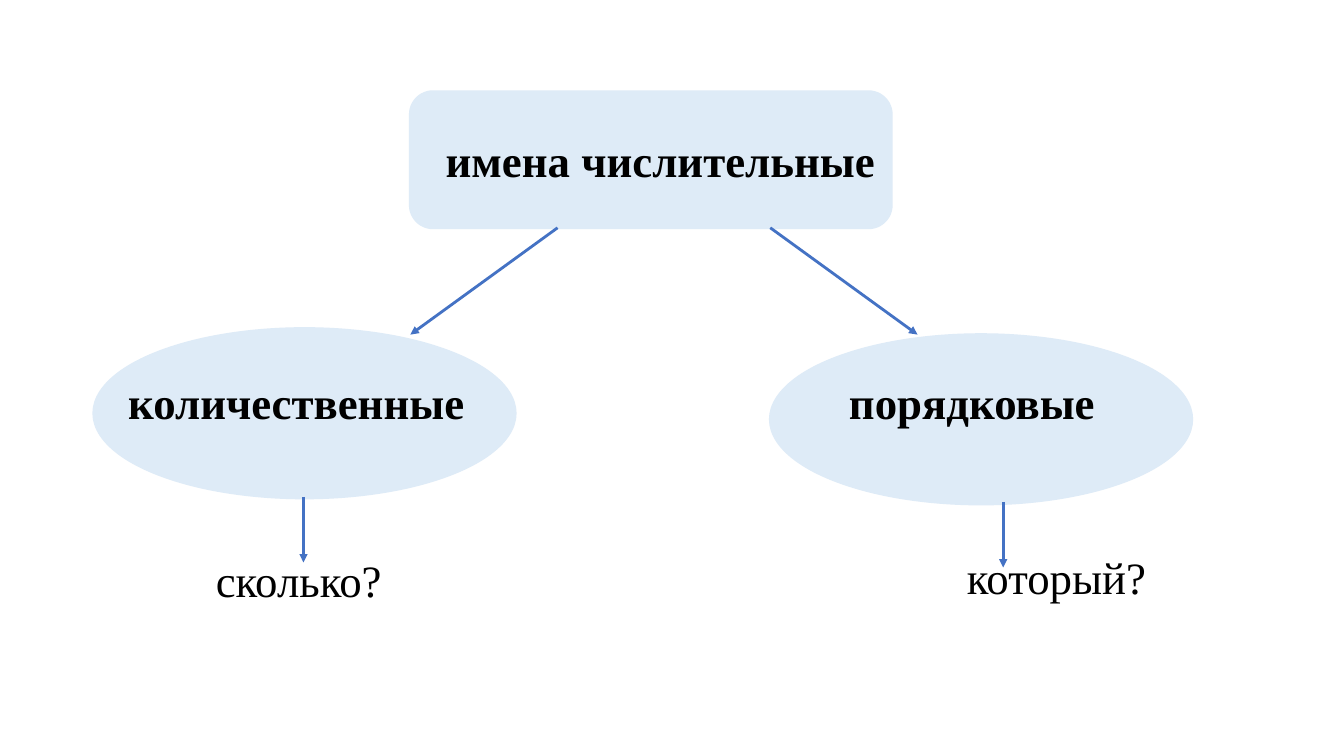
"""Build a slide that sorts Russian numerals into two kinds."""
from lxml import etree
from pptx import Presentation
from pptx.dml.color import RGBColor
from pptx.enum.shapes import MSO_CONNECTOR, MSO_SHAPE
from pptx.enum.text import MSO_ANCHOR, MSO_AUTO_SIZE, PP_ALIGN
from pptx.oxml.ns import qn
from pptx.util import Inches, Pt

ROUNDED = MSO_SHAPE.ROUNDED_RECTANGLE
ELLIPSE = MSO_SHAPE.OVAL
STRAIGHT = MSO_CONNECTOR.STRAIGHT
TOP = MSO_ANCHOR.TOP
LEFT = PP_ALIGN.LEFT
NO_FIT = MSO_AUTO_SIZE.NONE
TITLE_ONLY = 5


def color(value):
    """Turn a hex string into a colour."""
    return RGBColor.from_string(value)


class Diagram:
    """Hold the style and the slide of the diagram."""

    font_name = "Times New Roman"
    font_size = Pt(32)
    line_width = Pt(2)
    inset = Inches(0.05)
    text_height = 0.64
    ink = "000000"
    pale = "DEEBF7"
    blue = "4472C4"

    def __init__(self, page):
        """Keep the slide to draw on."""
        self.page = page

    def node(self, preset, left, top, width, height):
        """Draw a pale filled shape."""
        shape = self.page.shapes.add_shape(
            preset, Inches(left), Inches(top), Inches(width), Inches(height))
        shape.shadow.inherit = False
        shape.fill.solid()
        shape.fill.fore_color.rgb = color(self.pale)
        shape.line.color.rgb = color(self.pale)
        shape.line.width = self.line_width

    def arrow(self, start, end):
        """Draw an arrow from start to end."""
        points = [Inches(value) for value in (*start, *end)]
        connector = self.page.shapes.add_connector(STRAIGHT, *points)
        connector.line.color.rgb = color(self.blue)
        connector.line.width = self.line_width
        outline = connector.line._get_or_add_ln()
        etree.SubElement(outline, qn("a:tailEnd"), type="triangle")
        etree.SubElement(connector._element.spPr, qn("a:effectLst"))

    def set_text(self, box, text, bold):
        """Fill a text shape with one styled paragraph."""
        frame = box.text_frame
        frame.text = text
        frame.word_wrap = True
        frame.auto_size = NO_FIT
        frame.vertical_anchor = TOP
        frame.margin_left = frame.margin_right = self.inset
        frame.margin_top = frame.margin_bottom = self.inset
        para = frame.paragraphs[0]
        para.alignment = LEFT
        para.line_spacing = 1.0
        para.space_before = Pt(0)
        para.font.name = self.font_name
        para.font.size = self.font_size
        para.font.bold = bold
        para.font.color.rgb = color(self.ink)

    def title(self, text, left, top, width):
        """Place the title in front of the shapes drawn so far."""
        box = self.page.shapes.title
        box.left, box.top = Inches(left), Inches(top)
        box.width, box.height = Inches(width), Inches(self.text_height)
        self.set_text(box, text, True)
        self.page.shapes._spTree.append(box._element)

    def label(self, text, left, top, width, bold=False):
        """Add a one-line text box."""
        box = self.page.shapes.add_textbox(
            Inches(left), Inches(top), Inches(width), Inches(self.text_height))
        self.set_text(box, text, bold)


def main():
    """Draw the numeral diagram and save the deck."""
    deck = Presentation()
    deck.slide_width, deck.slide_height = Inches(13.33), Inches(7.5)
    diagram = Diagram(deck.slides.add_slide(deck.slide_layouts[TITLE_ONLY]))

    diagram.node(ROUNDED, 4.07, 0.91, 4.77, 1.35)
    diagram.title("имена числительные", 4.37, 1.27, 4.47)
    for start, end in ((5.53, 4.07), (7.64, 9.1)):
        diagram.arrow((start, 2.26), (end, 3.32))

    kinds = (
        ("количественные", (0.93, 3.26), 1.22, (3.01, 4.93), "сколько?", (2.09, 5.43)),
        ("порядковые", (7.64, 3.32), 8.37, (9.95, 4.98), "который?", (9.54, 5.4)),
    )
    for kind, ellipse, kind_left, (stem_x, stem_top), question, place in kinds:
        diagram.node(ELLIPSE, *ellipse, 4.18, 1.68)
        diagram.label(kind, kind_left, 3.67, 3.75, bold=True)
        diagram.arrow((stem_x, stem_top), (stem_x, stem_top + 0.65))
        diagram.label(question, *place, 2.28)

    deck.save("out.pptx")


if __name__ == "__main__":
    main()
